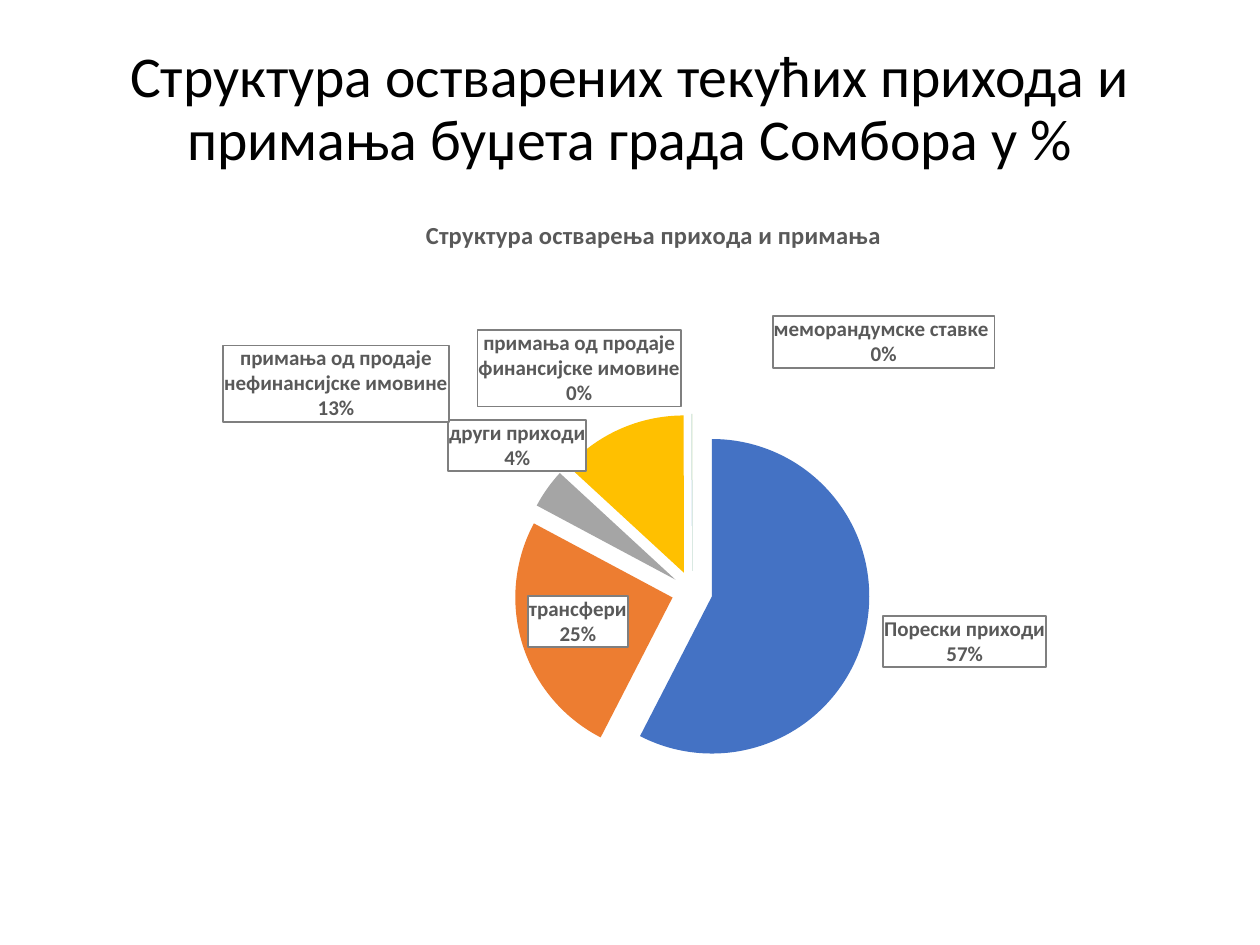
from lxml.etree import SubElement
from pptx import Presentation
from pptx.chart.data import CategoryChartData
from pptx.dml.color import RGBColor
from pptx.enum.chart import XL_CHART_TYPE, XL_LABEL_POSITION
from pptx.enum.text import MSO_ANCHOR, PP_ALIGN
from pptx.oxml import parse_xml
from pptx.oxml.ns import nsdecls, qn
from pptx.util import Inches, Pt

BLACK = RGBColor(0x00, 0x00, 0x00)
GREY = RGBColor(0x59, 0x59, 0x59)
FONT = "Calibri"
TITLE = "Структура остварених текућих прихода и примања буџета града Сомбора у %"
CHART_TITLE = "Структура остварења прихода и примања"
EXPLOSION = 13
TRACE = 0.01  # rounds to 0 %, but a slice of exactly zero gets no label

# category, percent, slice colour, label offset as a share of the chart
REVENUES = [
    ("Порески приходи", 57, RGBColor(0x44, 0x72, 0xC4), (0.01, -0.03)),
    ("трансфери", 25, RGBColor(0xED, 0x7D, 0x31), None),
    ("други приходи", 4, RGBColor(0xA5, 0xA5, 0xA5), (0.04, -0.02)),
    ("примања од продаје нефинансијске имовине", 13,
     RGBColor(0xFF, 0xC0, 0x00), (-0.15, 0)),
    ("примања од продаје финансијске имовине", TRACE,
     RGBColor(0x5B, 0x9B, 0xD5), (-0.1, 0)),
    ("меморандумске ставке ", TRACE, RGBColor(0x70, 0xAD, 0x47), (0.17, -0.06)),
]
LABEL_FORMAT = {"name": FONT, "size": Pt(12), "bold": True}
LABEL_BOX = (
    f'<c:spPr {nsdecls("c", "a")}><a:solidFill><a:srgbClr val="FFFFFF"/></a:solidFill>'
    '<a:ln w="12700"><a:solidFill><a:srgbClr val="7F7F7F"/></a:solidFill></a:ln></c:spPr>'
)


def set_font(font, color, **values):
    for name, value in values.items():
        setattr(font, name, value)
    font.color.rgb = color


def manual_layout(**values):
    layout = parse_xml(f'<c:layout {nsdecls("c")}><c:manualLayout/></c:layout>')
    for name, value in values.items():
        SubElement(layout[0], qn(f"c:{name}")).set("val", str(value))
    return layout


def add_title(page):
    box = page.shapes.add_textbox(Inches(0.3), Inches(0.25), Inches(9.4), Inches(1.17))
    frame = box.text_frame
    frame.word_wrap = True
    frame.vertical_anchor = MSO_ANCHOR.BOTTOM
    para = frame.paragraphs[0]
    para.alignment = PP_ALIGN.CENTER
    para.line_spacing = 0.9
    span = para.add_run()
    span.text = TITLE
    set_font(span.font, BLACK, name=FONT, size=Pt(33))


def box_label(element):
    """Give a label (or the series labels) a bordered box, category and percent."""
    text_format = element.find(qn("c:txPr"))
    anchor = element.find(qn("c:dLblPos")) if text_format is None else text_format
    anchor.addprevious(parse_xml(LABEL_BOX))
    for flag in ("LegendKey", "Val", "CatName", "SerName", "Percent"):
        element.find(qn(f"c:show{flag}")).set("val", str(int(flag in ("CatName", "Percent"))))
    separator = parse_xml(f'<c:separator {nsdecls("c")}>\n</c:separator>')
    last_flag = element.find(qn("c:showBubbleSize"))
    if last_flag is None:
        last_flag = element.find(qn("c:showPercent"))
    last_flag.addnext(separator)


def hide_leader_lines(labels_xml):
    for old_flag in labels_xml.findall(qn("c:showLeaderLines")):
        labels_xml.remove(old_flag)
    flag = parse_xml(f'<c:showLeaderLines {nsdecls("c")} val="0"/>')
    labels_xml.find(qn("c:separator")).addnext(flag)


def write_fixed_label(label, lines):
    """Fix the wording where the rounded shares do not add up to 100."""
    frame = label.text_frame
    for index, line in enumerate(lines):
        para = frame.add_paragraph() if index else frame.paragraphs[0]
        span = para.add_run()
        span.text = line
        set_font(span.font, GREY, **LABEL_FORMAT)


def format_slices(series):
    labels = series.data_labels
    set_font(labels.font, GREY, **LABEL_FORMAT)
    labels.number_format = "0%"
    labels.number_format_is_linked = False
    labels.position = XL_LABEL_POSITION.BEST_FIT
    labels_xml = series._element.find(qn("c:dLbls"))
    box_label(labels_xml)
    hide_leader_lines(labels_xml)

    for index, (category, percent, color, offset) in enumerate(REVENUES):
        point = series.points[index]
        point.format.fill.solid()
        point.format.fill.fore_color.rgb = color
        if offset is None:
            continue
        label = point.data_label
        label.position = XL_LABEL_POSITION.OUTSIDE_END
        if index == 0:
            write_fixed_label(label, [category, f"{percent}%"])
        else:
            set_font(label.font, GREY, **LABEL_FORMAT)
        label_xml = labels_xml.findall(qn("c:dLbl"))[-1]
        box_label(label_xml)
        label_xml.insert(1, manual_layout(x=offset[0], y=offset[1]))

    explosion = parse_xml(f'<c:explosion {nsdecls("c")} val="{EXPLOSION}"/>')
    series._element.find(qn("c:dPt")).addprevious(explosion)


def add_revenue_chart(page):
    data = CategoryChartData()
    data.categories = [revenue[0] for revenue in REVENUES]
    data.add_series("Series 1", [revenue[1] for revenue in REVENUES])
    chart = page.shapes.add_chart(
        XL_CHART_TYPE.PIE, Inches(0.75), Inches(1.54), Inches(8.95), Inches(5.13), data
    ).chart
    set_font(chart.font, BLACK, name=FONT, size=Pt(10))
    chart.has_legend = False
    chart.plots[0].vary_by_categories = True

    frame = chart.chart_title.text_frame
    frame.text = CHART_TITLE
    set_font(frame.paragraphs[0].runs[0].font, GREY, name=FONT, size=Pt(14), bold=True)
    title_xml = chart.chart_title._element
    plot_xml = chart._chartSpace.chart.plotArea
    for parent in (title_xml, plot_xml):
        for old_layout in parent.findall(qn("c:layout")):
            parent.remove(old_layout)
    title_xml.find(qn("c:tx")).addnext(
        manual_layout(xMode="edge", yMode="edge", x=0.29, y=0.03))
    plot_xml.insert(0, manual_layout(
        layoutTarget="inner", xMode="edge", yMode="edge", x=0.21, y=0.34, w=0.64, h=0.55))
    format_slices(chart.plots[0].series[0])


def main():
    deck = Presentation()
    deck.slide_width, deck.slide_height = Inches(10), Inches(7.5)
    page = deck.slides.add_slide(deck.slide_layouts[6])
    add_title(page)
    add_revenue_chart(page)
    deck.save("out.pptx")


if __name__ == "__main__":
    main()
